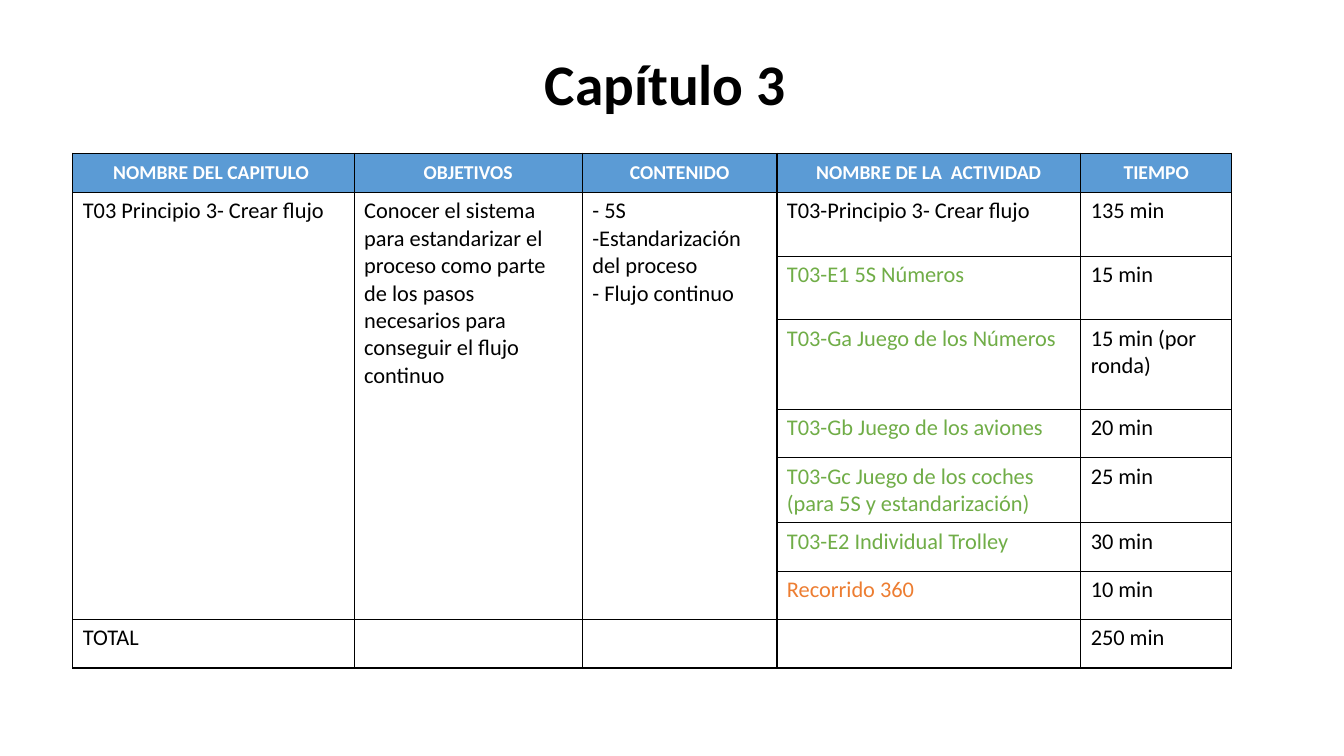
from pptx import Presentation
from pptx.dml.color import RGBColor
from pptx.enum.text import MSO_ANCHOR, MSO_AUTO_SIZE, PP_ALIGN
from pptx.oxml import parse_xml
from pptx.oxml.ns import nsdecls
from pptx.util import Pt

BLACK, WHITE, BLUE, GREEN, ORANGE = "000000", "FFFFFF", "5B9BD5", "70AD47", "ED7D31"


def color(value):
    return RGBColor.from_string(value)


def style_cell(cell, text, ink, fill, header):
    cell.text = text
    cell.fill.solid()
    cell.fill.fore_color.rgb = color(fill)
    cell.vertical_anchor = MSO_ANCHOR.MIDDLE if header else MSO_ANCHOR.TOP
    for para in cell.text_frame.paragraphs:
        para.alignment = PP_ALIGN.CENTER if header else PP_ALIGN.LEFT
        para.font.name = "Calibri"
        para.font.size = Pt(14 if header else 16)
        para.font.bold = header
        para.font.color.rgb = color(ink)
    # Thin black border on all four sides
    for position, side in enumerate(("lnL", "lnR", "lnT", "lnB")):
        border = parse_xml(
            f'<a:{side} {nsdecls("a")} w="12700"><a:solidFill>'
            f'<a:srgbClr val="{BLACK}"/></a:solidFill></a:{side}>')
        cell._tc.get_or_add_tcPr().insert(position, border)


deck = Presentation()
deck.slide_width, deck.slide_height = Pt(960), Pt(540)
page = deck.slides.add_slide(deck.slide_layouts[5])

# Title
title = page.shapes.title
title.left, title.top, title.width, title.height = Pt(0), Pt(36.7), Pt(960), Pt(94.3)
frame = title.text_frame
frame.text = "Capítulo 3 "
frame.word_wrap = True
frame.auto_size = MSO_AUTO_SIZE.NONE
frame.vertical_anchor = MSO_ANCHOR.TOP
para = frame.paragraphs[0]
para.alignment = PP_ALIGN.CENTER
para.line_spacing = 0.9
para.font.name = "Calibri"
para.font.size = Pt(41)
para.font.bold = True
para.font.color.rgb = color(BLACK)

# Table contents
headings = ["NOMBRE DEL CAPITULO ", "OBJETIVOS", "CONTENIDO",
            "NOMBRE DE LA  ACTIVIDAD", "TIEMPO"]
chapter = [
    "T03 Principio 3- Crear flujo",
    "Conocer el sistema para estandarizar el proceso como parte de los pasos "
    "necesarios para conseguir el flujo continuo",
    "- 5S\n-Estandarización del proceso\n- Flujo continuo",
]
activities = [
    ("T03-Principio 3- Crear flujo", "135 min", BLACK),
    ("T03-E1 5S Números", "15 min", GREEN),
    ("T03-Ga Juego de los Números", "15 min (por ronda)", GREEN),
    ("T03-Gb Juego de los aviones", "20 min", GREEN),
    ("T03-Gc Juego de los coches (para 5S y estandarización)", "25 min", GREEN),
    ("T03-E2 Individual Trolley", "30 min", GREEN),
    ("Recorrido 360", "10 min", ORANGE),
]
rows = [headings]
for number, (activity, duration, ink) in enumerate(activities):
    rows.append((chapter if number == 0 else [""] * 3) + [activity, duration])
rows.append(["TOTAL", "", "", "", "250 min"])

# Table grid
widths = [201, 163, 139, 217, 108]
heights = [28, 45.5, 45.5, 64, 34.6, 45.5, 34.6, 34.6, 34.6]
table = page.shapes.add_table(len(rows), len(widths), Pt(52), Pt(109.5),
                              Pt(sum(widths)), Pt(sum(heights))).table
for column, width in zip(table.columns, widths):
    column.width = Pt(width)
for row, height in zip(table.rows, heights):
    row.height = Pt(height)

# Cells
for r, texts in enumerate(rows):
    header = r == 0
    for c, text in enumerate(texts):
        ink = WHITE if header else BLACK
        if c == 3 and 1 <= r <= len(activities):
            ink = activities[r - 1][2]
        style_cell(table.cell(r, c), text, ink, BLUE if header else WHITE, header)

# Chapter columns span all activities
for c in range(len(chapter)):
    table.cell(1, c).merge(table.cell(len(activities), c))

deck.save("out.pptx")
